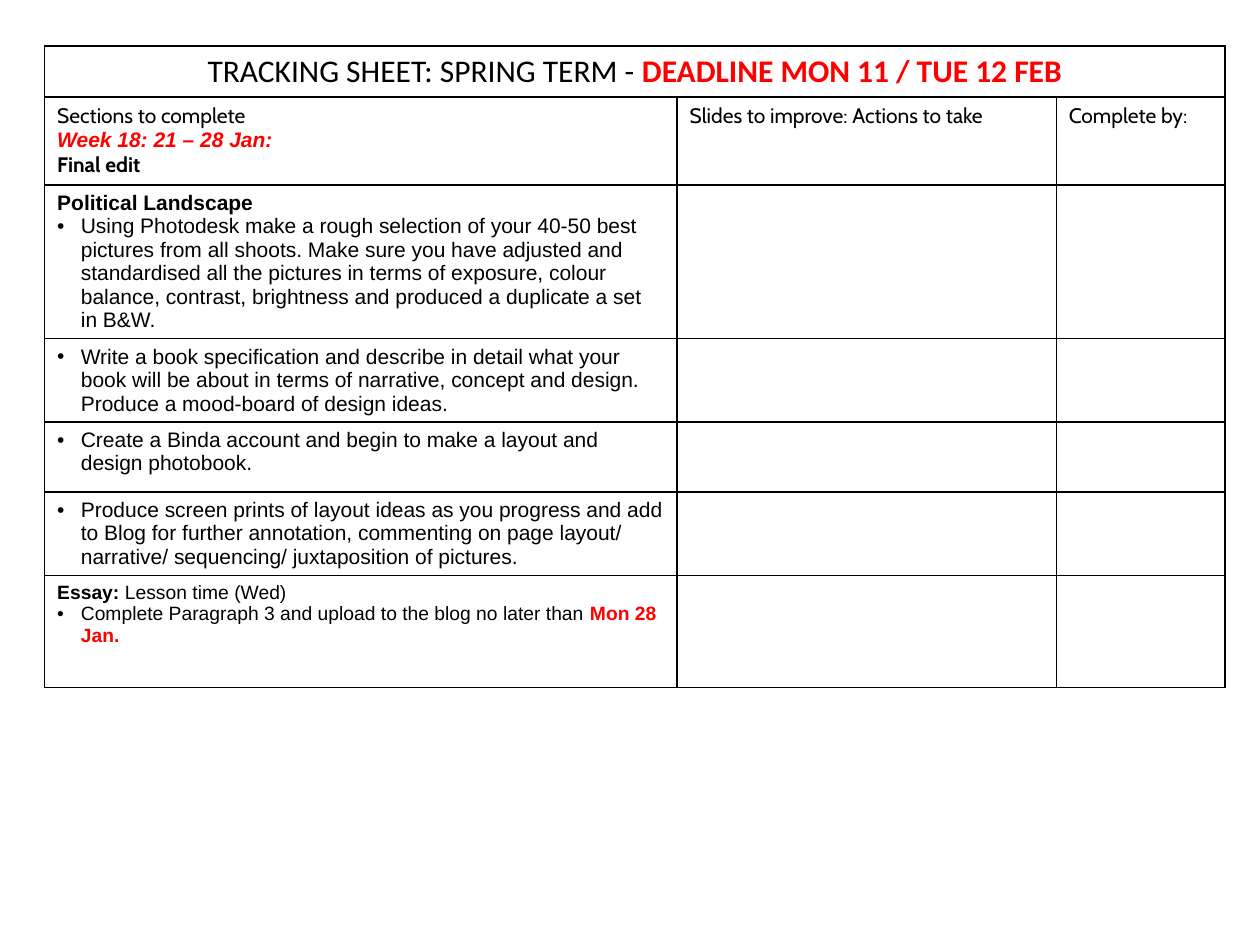
from lxml import etree
from pptx import Presentation
from pptx import util as u
from pptx.dml.color import RGBColor
from pptx.enum import text as t
from pptx.oxml import ns

BLACK, RED, WHITE = "000000", "FF0000", "FFFFFF"


def color(value):
    return RGBColor.from_string(value)


def run(text, **style):
    return text, style


def line(*runs, bullet=False, align=t.PP_ALIGN.LEFT):
    return runs, bullet, align


class SlideBuilder:
    font = "Arial"
    size = 12
    indent = 13.5
    border = 1

    def __init__(self, slide):
        self.slide = slide

    def add_text(self, paragraph, text, font=None, size=None, fill=BLACK, bold=False, italic=False):
        piece = paragraph.add_run()
        piece.text = text
        piece.font.name = font or self.font
        piece.font.size = u.Pt(size or self.size)
        piece.font.bold = bold
        piece.font.italic = italic
        piece.font.color.rgb = color(fill)

    def bullet(self, paragraph):
        properties = paragraph._p.get_or_add_pPr()
        properties.set("marL", str(u.Pt(self.indent)))
        properties.set("indent", str(-u.Pt(self.indent)))
        etree.SubElement(properties, ns.qn("a:buFont"), typeface="Arial")
        etree.SubElement(properties, ns.qn("a:buChar"), char="•")

    def fill_text(self, cell, lines):
        frame = cell.text_frame
        for index, (runs, bulleted, align) in enumerate(lines):
            paragraph = frame.add_paragraph() if index else frame.paragraphs[0]
            paragraph.alignment = align
            if bulleted:
                self.bullet(paragraph)
            for text, style in runs:
                self.add_text(paragraph, text, **style)

    def frame_cell(self, cell):
        cell.fill.solid()
        cell.fill.fore_color.rgb = color(WHITE)
        properties = cell._tc.get_or_add_tcPr()
        for index, side in enumerate(("lnL", "lnR", "lnT", "lnB")):
            edge = etree.Element(ns.qn(f"a:{side}"), w=str(u.Pt(self.border)))
            solid = etree.SubElement(edge, ns.qn("a:solidFill"))
            etree.SubElement(solid, ns.qn("a:srgbClr"), val=BLACK)
            properties.insert(index, edge)

    def table(self, left, top, widths, heights, rows):
        shape = self.slide.shapes.add_table(
            len(heights), len(widths), u.Pt(left), u.Pt(top),
            u.Pt(sum(widths)), u.Pt(sum(heights)))
        table = shape.table
        table.first_row = table.horz_banding = False
        for column, width in zip(table.columns, widths):
            column.width = u.Pt(width)
        for row, height in zip(table.rows, heights):
            row.height = u.Pt(height)
        for cell in table.iter_cells():
            self.frame_cell(cell)
        table.cell(0, 0).merge(table.cell(0, len(widths) - 1))
        for row, contents in zip(table.rows, rows):
            for cell, lines in zip(row.cells, contents):
                self.fill_text(cell, lines)


def task(text):
    return line(run(text), bullet=True)


TITLE = {"font": "Calibri", "size": 18}
HEADING = {"font": "Cabin"}
SMALL = {"size": 11}

ROWS = [
    [[line(run("TRACKING SHEET: SPRING TERM - ", **TITLE),
           run("DEADLINE MON 11 / TUE 12 FEB", fill=RED, bold=True, **TITLE),
           align=t.PP_ALIGN.CENTER)]],
    [[line(run("Sections to complete", **HEADING)),
      line(run("Week 18: 21 – 28 Jan:", fill=RED, bold=True, italic=True)),
      line(run("Final edit", bold=True, **HEADING))],
     [line(run("Slides to improve: Actions to take", **HEADING))],
     [line(run("Complete by:", **HEADING))]],
    [[line(run("Political Landscape", bold=True)),
      task("Using Photodesk make a rough selection of your 40-50 best pictures from all shoots. "
           "Make sure you have adjusted and standardised all the pictures in terms of exposure, "
           "colour balance, contrast, brightness and produced a duplicate a set in B&W.")]],
    [[task("Write a book specification and describe in detail what your book will be about "
           "in terms of narrative, concept and design.  Produce a mood-board of design ideas.")]],
    [[task("Create a Binda account and begin to make a layout and design photobook.")]],
    [[task("Produce screen prints of layout ideas as you progress and add to Blog for further "
           "annotation, commenting on page layout/ narrative/ sequencing/ juxtaposition of pictures.")]],
    [[line(run("Essay: ", bold=True, **SMALL), run("Lesson time (Wed)", **SMALL)),
      line(run("Complete Paragraph 3 and upload to the blog no later than ", **SMALL),
           run("Mon 28 Jan.", fill=RED, bold=True, **SMALL), bullet=True)]],
]


def main():
    presentation = Presentation()
    presentation.slide_width = u.Pt(720)
    presentation.slide_height = u.Pt(540)
    builder = SlideBuilder(presentation.slides.add_slide(presentation.slide_layouts[6]))
    builder.table(25.5, 26.2, [361.4, 216.7, 96.5],
                  [29.2, 50.3, 87.5, 47.5, 40, 47.8, 64], ROWS)
    presentation.save("out.pptx")


if __name__ == "__main__":
    main()
